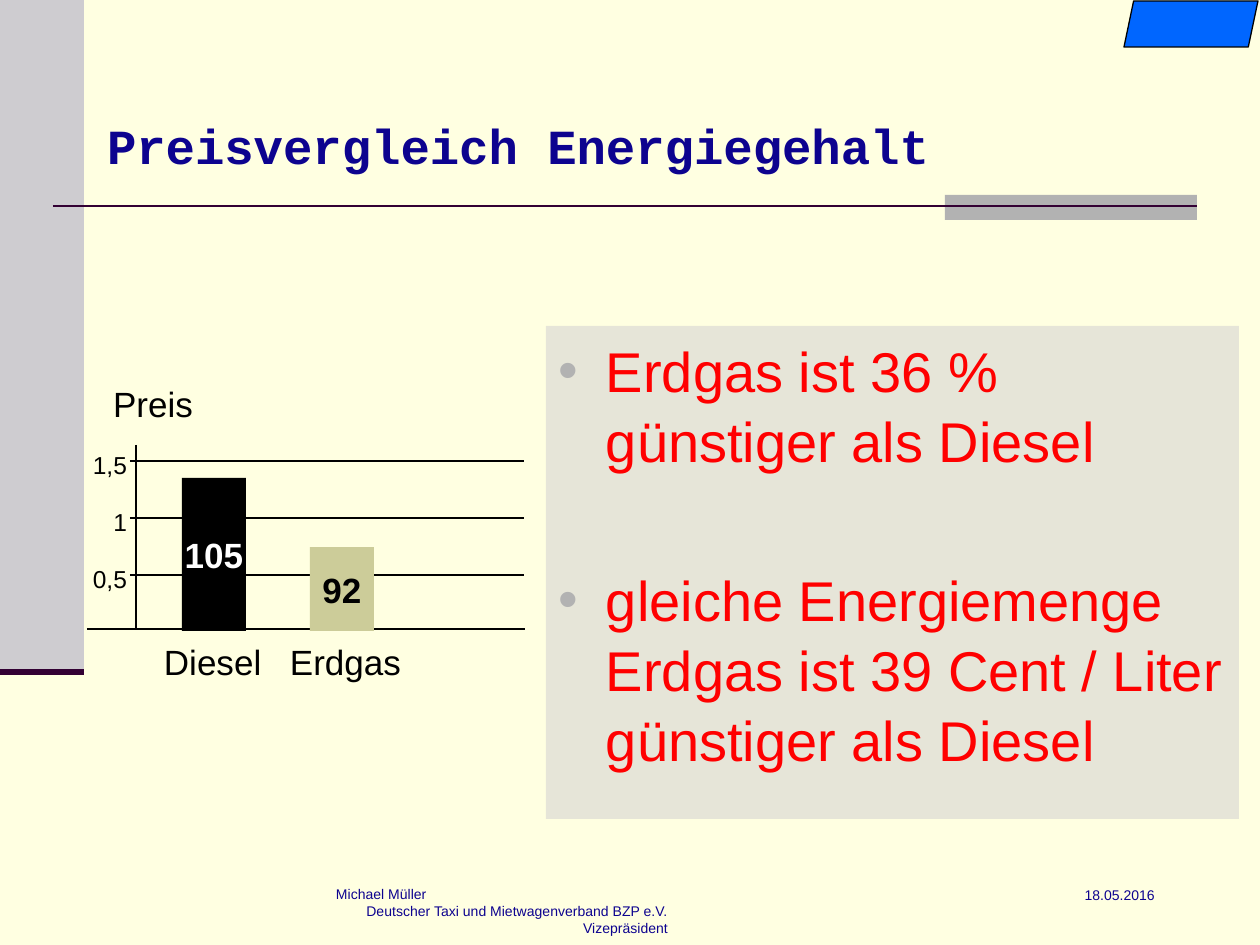
from dataclasses import dataclass

from lxml.etree import SubElement
from pptx import Presentation
from pptx.dml.color import RGBColor
from pptx.enum.shapes import MSO_CONNECTOR, MSO_SHAPE
from pptx.enum.text import MSO_ANCHOR, PP_ALIGN
from pptx.oxml.ns import qn
from pptx.util import Emu, Pt

EMU_PER_PX = 914400 / 126
NAVY, RED, BLACK, WHITE = "0D038F", "FF0000", "000000", "FFFFFF"
GREY, PLUM = "B2B2B2", "330033"
LEFT, CENTER, RIGHT = PP_ALIGN.LEFT, PP_ALIGN.CENTER, PP_ALIGN.RIGHT


@dataclass
class Bar:
    left: int
    top: int
    label: str
    fill: str
    color: str


@dataclass
class Line:
    x1: int
    y1: int
    x2: int
    y2: int
    color: str = BLACK
    width: float = 0.75


def px(n: float) -> Emu:
    return Emu(round(n * EMU_PER_PX))


def rgb(color: str) -> RGBColor:
    return RGBColor.from_string(color)


def set_format(target, values: dict) -> None:
    for name, value in values.items():
        setattr(target, name, value)


def add_box(s, kind, x: int, y: int, w: int, h: int, fill: str, alpha: int = 100):
    sp = s.shapes.add_shape(kind, px(x), px(y), px(w), px(h))
    sp.shadow.inherit = False
    sp.fill.solid()
    sp.fill.fore_color.rgb = rgb(fill)
    sp.line.fill.background()
    if alpha < 100:
        clr = sp.fill._xPr.find(qn("a:solidFill"))[0]
        SubElement(clr, qn("a:alpha"), val=str(alpha * 1000))
    return sp


def add_line(s, line: Line) -> None:
    ends = (px(n) for n in (line.x1, line.y1, line.x2, line.y2))
    c = s.shapes.add_connector(MSO_CONNECTOR.STRAIGHT, *ends)
    c.line.color.rgb = rgb(line.color)
    c.line.width = Pt(line.width)
    SubElement(c._element.spPr, qn("a:effectLst"))


def set_frame(tf, inset_x: int = 0, inset_y: int = 0, **values) -> None:
    set_format(tf, {
        "margin_left": px(inset_x), "margin_right": px(inset_x),
        "margin_top": px(inset_y), "margin_bottom": px(inset_y),
        "word_wrap": True, "vertical_anchor": MSO_ANCHOR.TOP, **values})


def write(p, text: str, size: int, color: str, align=LEFT,
          name: str = "Arial", bold: bool = False) -> None:
    p.alignment = align
    r = p.add_run()
    r.text = text
    set_format(r.font, {"size": Pt(size), "name": name, "bold": bold})
    r.font.color.rgb = rgb(color)


def add_text(s, x: int, y: int, w: int, h: int, text: str, size: int,
             color: str, align=LEFT):
    tf = s.shapes.add_textbox(px(x), px(y), px(w), px(h)).text_frame
    set_frame(tf)
    write(tf.paragraphs[0], text, size, color, align)
    return tf


def add_bullet(p, indent: int) -> None:
    pPr = p._p.get_or_add_pPr()
    pPr.set("marL", str(px(indent)))
    pPr.set("indent", str(px(-indent)))
    SubElement(SubElement(pPr, qn("a:buClr")), qn("a:srgbClr"), val=GREY)
    SubElement(pPr, qn("a:buFont"), typeface="Arial")
    SubElement(pPr, qn("a:buChar"), char="•")


def draw_frame(s) -> None:
    # Corner badge, side band and title rule
    badge = add_box(s, MSO_SHAPE.PARALLELOGRAM, 1124, 1, 134, 46, "0066FF")
    badge.adjustments[0] = 0.21
    badge.line.color.rgb = rgb(BLACK)
    badge.line.width = Pt(0.75)
    add_box(s, MSO_SHAPE.RECTANGLE, 0, 0, 84, 672, NAVY, alpha=20)
    add_box(s, MSO_SHAPE.RECTANGLE, 945, 195, 252, 25, GREY)
    add_line(s, Line(53, 206, 1197, 206, PLUM, 1.5))
    add_line(s, Line(0, 672, 84, 672, PLUM, 3.5))

    # Footer
    add_text(s, 927, 886, 228, 45, "18.05.2016", 8, NAVY, RIGHT)
    tf = add_text(s, 336, 886, 332, 53, "Michael Müller", 8, NAVY)
    for text in ("Deutscher Taxi und Mietwagenverband BZP e.V.", "Vizepräsident"):
        write(tf.add_paragraph(), text, 8, NAVY, RIGHT)


def draw_text(s) -> None:
    # Title
    tf = s.shapes.add_textbox(px(94), px(96), px(853), px(98)).text_frame
    set_frame(tf, 13, 6, vertical_anchor=MSO_ANCHOR.MIDDLE)
    write(tf.paragraphs[0], "Preisvergleich Energiegehalt", 28, NAVY,
          name="Courier New", bold=True)

    # Statements
    tf = add_box(s, MSO_SHAPE.RECTANGLE, 546, 326, 693, 493, NAVY, alpha=10).text_frame
    set_frame(tf, 13, 8)
    statements = ("Erdgas ist 36 % günstiger als Diesel",
                  "gleiche Energiemenge Erdgas ist 39 Cent / Liter günstiger als Diesel")
    for i, text in enumerate(statements):
        p = tf.add_paragraph() if i else tf.paragraphs[0]
        add_bullet(p, 47)
        set_format(p, {"line_spacing": 1.04, "space_before": Pt(51 if i else 0)})
        write(p, text, 32, RED)


def draw_price_diagram(s) -> None:
    # Captions
    add_text(s, 113, 382, 133, 42, "Preis", 20, BLACK)
    tf = add_text(s, 164, 640, 290, 42, "Diesel\tErdgas", 20, BLACK)
    tabs = SubElement(tf.paragraphs[0]._p.get_or_add_pPr(), qn("a:tabLst"))
    SubElement(tabs, qn("a:tab"), pos=str(px(126)), algn="l")

    # Axes, grid and scale
    add_line(s, Line(136, 445, 136, 629))
    for i, tick in enumerate(("1,5", "1", "0,5")):
        y = 461 + 57 * i
        add_line(s, Line(130, y, 524, y))
        add_text(s, 63, y - 11, 64, 29, tick, 14, BLACK, RIGHT)
    add_line(s, Line(87, 629, 525, 629))

    # Bars
    for bar in (Bar(182, 478, "105", BLACK, WHITE),
                Bar(310, 547, "92", "CCCC99", BLACK)):
        sp = add_box(s, MSO_SHAPE.RECTANGLE, bar.left, bar.top, 64,
                     631 - bar.top, bar.fill)
        set_frame(sp.text_frame, 13, 6, word_wrap=False,
                  vertical_anchor=MSO_ANCHOR.MIDDLE)
        write(sp.text_frame.paragraphs[0], bar.label, 20, bar.color, CENTER, bold=True)


def main() -> None:
    prs = Presentation()
    set_format(prs, {"slide_width": px(1260), "slide_height": px(945)})
    s = prs.slides.add_slide(prs.slide_layouts[6])
    s.background.fill.solid()
    s.background.fill.fore_color.rgb = rgb("FFFFE1")
    draw_frame(s)
    draw_text(s)
    draw_price_diagram(s)
    prs.save("out.pptx")


if __name__ == "__main__":
    main()
